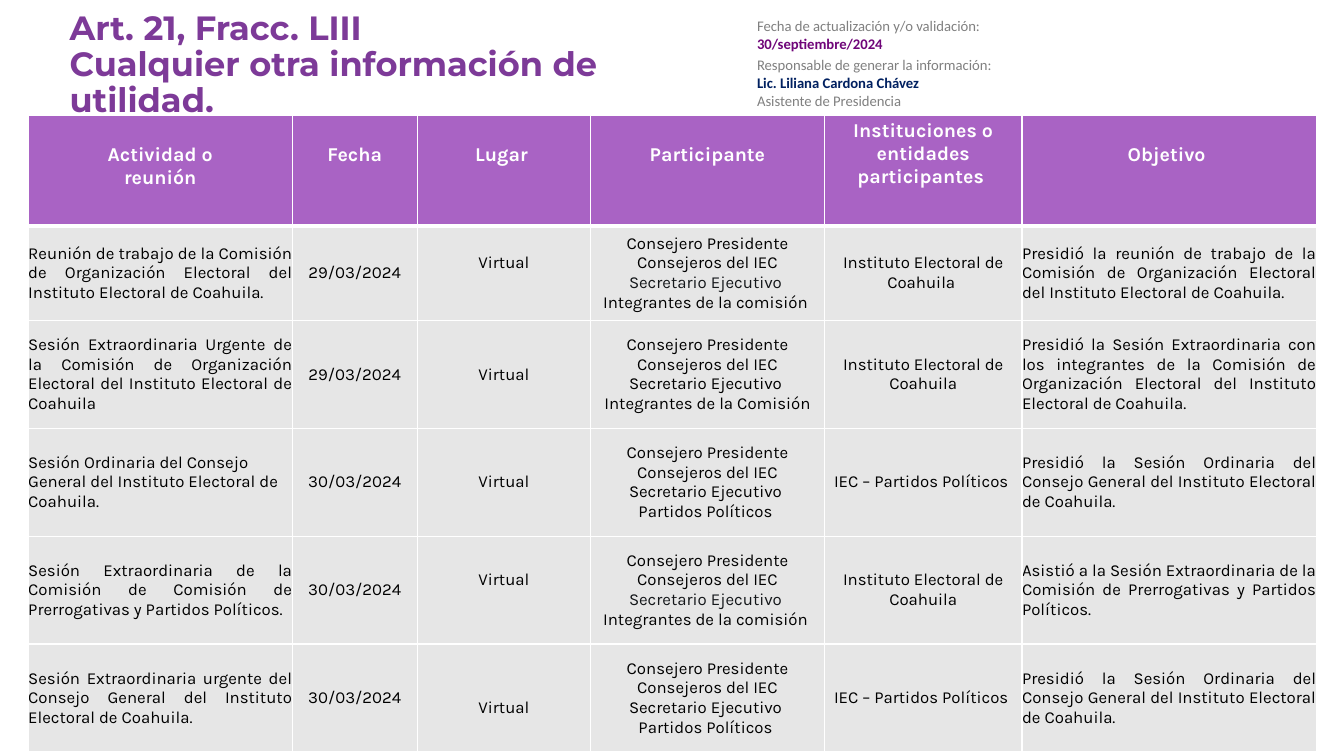
from dataclasses import dataclass

import pptx
import pptx.dml.color
import pptx.enum.text
import pptx.oxml
import pptx.oxml.ns
import pptx.util

ALIGN = pptx.enum.text.PP_ALIGN
ANCHOR = pptx.enum.text.MSO_ANCHOR
FIT = pptx.enum.text.MSO_AUTO_SIZE
Pt = pptx.util.Pt
SLIDE_W, SLIDE_H = pptx.util.Inches(13.33), pptx.util.Inches(7.5)


@dataclass(frozen=True)
class Theme:
    title: str = "7D3A98"
    date: str = "6F0579"
    person: str = "002060"
    label: str = "808080"
    header_fill: str = "A963C4"
    body_fill: str = "E6E6E6"
    white: str = "FFFFFF"
    black: str = "000000"
    ink: str = "14171A"
    title_font: str = "Montserrat"
    table_font: str = "Karla"
    info_font: str = "Calibri"
    title_size: float = 24
    header_size: float = 14
    body_size: float = 12
    info_size: float = 10.5


T = Theme()


@dataclass(frozen=True)
class Box:
    """Left, top, width and height in percent of the slide."""
    x: float
    y: float
    w: float
    h: float

    def emu(self) -> tuple[int, int, int, int]:
        return share_w(self.x), share_h(self.y), share_w(self.w), share_h(self.h)


@dataclass(frozen=True)
class Line:
    text: str
    color: str
    bold: bool = False


@dataclass(frozen=True)
class Activity:
    name: str
    date: str
    attendees: str
    institutions: str
    goal: str
    secretary_color: str = T.black
    name_align: ALIGN = ALIGN.JUSTIFY
    place_lift: float = 0  # lines left free below the place, or above if negative


TITLE_BOX = Box(4.43, 3.6, 42.61, 10.13)
DATE_BOX = Box(55.59, 1.6, 18.68, 6)
OWNER_BOX = Box(55.59, 6.8, 19.88, 8.4)
TABLE_BOX = Box(2.1, 15.2, 95.87, 84)
COLUMNS = [19.65, 9.3, 12.9, 17.4, 14.7, 21.9]
ROWS = [14.67, 12.53] + [14.27] * 4

HEADERS = ["Actividad o\nreunión", "Fecha", "Lugar ", "Participante",
           "Instituciones o entidades participantes ", "Objetivo "]
IEC = "Instituto Electoral de Coahuila"
PARTIES = "IEC – Partidos Políticos "
ORDINARY = f"Presidió la Sesión Ordinaria del Consejo General del {IEC}."

ACTIVITIES = [
    Activity(f"Reunión de trabajo de la Comisión de Organización Electoral del {IEC}.",
             "29/03/2024", "Integrantes de la comisión ", IEC + " ",
             "Presidió la reunión de trabajo de la Comisión de Organización "
             f"Electoral del {IEC}.", secretary_color=T.ink, place_lift=1),
    Activity("Sesión Extraordinaria Urgente de la Comisión de Organización "
             f"Electoral del {IEC}",
             "29/03/2024", "Integrantes de la Comisión", IEC,
             "Presidió la Sesión Extraordinaria con los integrantes de la Comisión "
             f"de Organización Electoral del {IEC}."),
    Activity(f"Sesión Ordinaria del Consejo General del {IEC}.",
             "30/03/2024", "Partidos Políticos ", PARTIES, ORDINARY,
             name_align=ALIGN.LEFT),
    Activity("Sesión Extraordinaria de la Comisión de Comisión de Prerrogativas "
             "y Partidos Políticos.",
             "30/03/2024", "Integrantes de la comisión ", IEC,
             "Asistió a la Sesión Extraordinaria de la Comisión de Prerrogativas "
             "y Partidos Políticos.", secretary_color=T.ink, place_lift=1),
    Activity(f"Sesión Extraordinaria urgente del Consejo General del {IEC}.",
             "30/03/2024", "Partidos Políticos ", PARTIES, ORDINARY, place_lift=-1),
]


def share_w(percent: float) -> int:
    return round(SLIDE_W * percent / 100)


def share_h(percent: float) -> int:
    return round(SLIDE_H * percent / 100)


def write(tf, lines: list[Line], font: str, size: float, align=ALIGN.LEFT) -> None:
    for i, line in enumerate(lines):
        p = tf.paragraphs[0] if i == 0 else tf.add_paragraph()
        p.text, p.alignment = line.text, align
        p.font.name, p.font.size, p.font.bold = font, Pt(size), line.bold
        p.font.color.rgb = pptx.dml.color.RGBColor.from_string(line.color)


def add_title(s) -> None:
    sp = s.shapes.title
    sp.left, sp.top, sp.width, sp.height = TITLE_BOX.emu()
    tf = sp.text_frame
    tf.word_wrap, tf.auto_size = True, FIT.NONE
    tf.vertical_anchor = ANCHOR.MIDDLE
    text = "Art. 21, Fracc. LIII\vCualquier otra información de utilidad."
    write(tf, [Line(text, T.title, True)], T.title_font, T.title_size)
    tf.paragraphs[0].line_spacing = 0.9


def add_info(group, box: Box, lines: list[Line], wrap: bool) -> None:
    tf = group.shapes.add_textbox(*box.emu()).text_frame
    tf.word_wrap, tf.auto_size = wrap, FIT.SHAPE_TO_FIT_TEXT
    write(tf, lines, T.info_font, T.info_size)


def style_cell(cell, fill: str, edges: dict[str, float]) -> None:
    """Draw white borders (edge letter to points), then fill the cell."""
    tc_pr = cell._tc.get_or_add_tcPr()
    for edge, width in edges.items():
        tc_pr.append(pptx.oxml.parse_xml(
            f'<a:ln{edge} {pptx.oxml.ns.nsdecls("a")} w="{Pt(width)}"><a:solidFill>'
            f'<a:srgbClr val="{T.white}"/></a:solidFill></a:ln{edge}>'))
    cell.fill.solid()
    cell.fill.fore_color.rgb = pptx.dml.color.RGBColor.from_string(fill)


def fill_header(cell, text: str) -> None:
    style_cell(cell, T.header_fill, {"L": 1, "R": 1, "T": 1, "B": 3})
    if not text.startswith("Instituciones"):
        cell.margin_top = share_h(3.75)
    lines = [Line(part, T.white, True) for part in text.split("\n")]
    write(cell.text_frame, lines, T.table_font, T.header_size, ALIGN.CENTER)


def fill_activity(cells: list, act: Activity) -> None:
    attendees = [Line("Consejero Presidente", T.black),
                 Line("Consejeros del IEC", T.black),
                 Line("Secretario Ejecutivo ", act.secretary_color),
                 Line(act.attendees, T.black)]
    contents = [([Line(act.name, T.black)], act.name_align),
                ([Line(act.date, T.black)], ALIGN.CENTER),
                ([Line("Virtual", T.black)], ALIGN.CENTER),
                (attendees, ALIGN.CENTER),
                ([Line(act.institutions, T.black)], ALIGN.CENTER),
                ([Line(act.goal, T.black)], ALIGN.JUSTIFY)]
    for cell, (lines, align) in zip(cells, contents):
        style_cell(cell, T.body_fill, {"L": 1, "R": 1, "B": 1})
        cell.margin_left = cell.margin_right = cell.margin_top = cell.margin_bottom = 0
        cell.vertical_anchor = ANCHOR.MIDDLE
        write(cell.text_frame, lines, T.table_font, T.body_size, align)
    line_height = share_h(2.6)
    cells[2].margin_bottom = round(max(act.place_lift, 0) * line_height)
    cells[2].margin_top = round(max(-act.place_lift, 0) * line_height)


def add_activity_table(s) -> None:
    table = s.shapes.add_table(len(ROWS), len(COLUMNS), *TABLE_BOX.emu()).table
    table.horz_banding = False
    for column, width in zip(table.columns, COLUMNS):
        column.width = share_w(width)
    for row, height in zip(table.rows, ROWS):
        row.height = share_h(height)
    header, *body = [list(row.cells) for row in table.rows]
    for cell, text in zip(header, HEADERS):
        fill_header(cell, text)
    for cells, act in zip(body, ACTIVITIES):
        fill_activity(cells, act)


def main() -> None:
    prs = pptx.Presentation()
    prs.slide_width, prs.slide_height = SLIDE_W, SLIDE_H
    s = prs.slides.add_slide(prs.slide_layouts[5])
    add_title(s)
    group = s.shapes.add_group_shape()
    add_info(group, DATE_BOX, [Line("Fecha de actualización y/o validación:", T.label),
                               Line("30/septiembre/2024", T.date, True)], wrap=False)
    add_info(group, OWNER_BOX, [Line("Responsable de generar la información:", T.label),
                                Line("Lic. Liliana Cardona Chávez", T.person, True),
                                Line("Asistente de Presidencia", T.label)], wrap=True)
    add_activity_table(s)
    prs.save("out.pptx")


if __name__ == "__main__":
    main()
